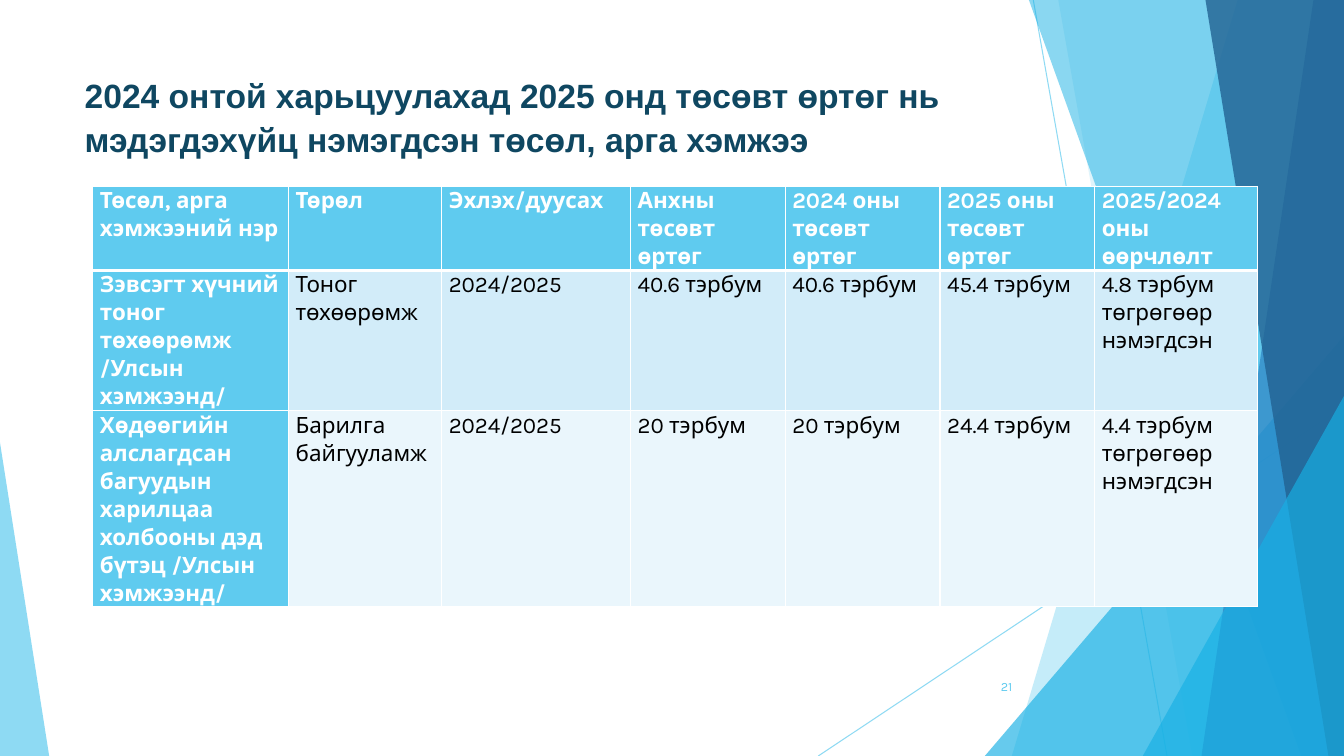
from lxml import etree
from pptx import Presentation
from pptx.dml.color import RGBColor
from pptx.enum.shapes import MSO_CONNECTOR, MSO_SHAPE
from pptx.enum.text import MSO_ANCHOR, MSO_AUTO_SIZE, PP_ALIGN
from pptx.oxml.ns import qn
from pptx.util import Cm, Pt

STRAIGHT = MSO_CONNECTOR.STRAIGHT
TRIANGLE = MSO_SHAPE.ISOSCELES_TRIANGLE
TITLE_ONLY = 5
WIDTH, HEIGHT = 33.87, 19.05
COLORS = {
    "sky": "5FCBEF",
    "cyan": "17B0E4",
    "blue": "2E83C3",
    "navy": "226292",
    "title": "0F4761",
    "white": "FFFFFF",
    "black": "000000",
    "band_dark": "D2ECF9",
    "band_light": "EAF6FC",
}


def paint(fill, color, opacity):
    fill.solid()
    fill.fore_color.rgb = RGBColor.from_string(COLORS[color])
    for node in fill._xPr.iter(qn("a:srgbClr")):
        etree.SubElement(node, qn("a:alpha"), val=str(opacity * 1000))


def style(paragraph, font, size, color, bold):
    paragraph.font.name = font
    paragraph.font.size = Pt(size)
    paragraph.font.bold = bold
    paragraph.font.color.rgb = RGBColor.from_string(COLORS[color])


deck = Presentation()
deck.slide_width = Cm(WIDTH)
deck.slide_height = Cm(HEIGHT)
page = deck.slides.add_slide(deck.slide_layouts[TITLE_ONLY])

for ends in [(26.04, 0, 29.41, HEIGHT), (WIDTH, 10.24, 20.62, HEIGHT)]:
    ray = page.shapes.add_connector(STRAIGHT, *[Cm(value) for value in ends])
    ray.line.width = Pt(0.75)
    paint(ray.line.fill, "sky", 70)
    etree.SubElement(ray._element.spPr, qn("a:effectLst"))

facets = [
    ("band", (31.19, 25.5), "sky", 36),
    ("band", (26.67, 30.05), "sky", 20),
    ("triangle", (24.82, 8.46, 9.05, 1), "cyan", 66),
    ("band", (25.93, 32.79), "cyan", 50),
    ("band", (33.1, 30.28), "blue", 70),
    ("band", (30.38, 33.48), "navy", 80),
    ("triangle", (28.8, 9.98, 5.07, 1), "cyan", 66),
    ("triangle", (0, 11.15, 1.24, 0), "sky", 70),
]
for kind, geometry, color, opacity in facets:
    if kind == "band":
        top_x, bottom_x = geometry
        outline = page.shapes.build_freeform(Cm(top_x), 0)
        corners = [(WIDTH, 0), (WIDTH, HEIGHT), (bottom_x, HEIGHT)]
        outline.add_line_segments([(Cm(x), Cm(y)) for x, y in corners])
        facet = outline.convert_to_shape()
    else:
        left, top, width, apex = geometry
        facet = page.shapes.add_shape(
            TRIANGLE, Cm(left), Cm(top), Cm(width), Cm(HEIGHT - top))
        facet.adjustments[0] = apex
    paint(facet.fill, color, opacity)
    facet.line.fill.background()
    facet.shadow.inherit = False

title = page.shapes.title
title.left, title.top, title.width, title.height = Cm(1.88), Cm(1.7), Cm(23.88), Cm(3.66)
title.text_frame.text = (
    "2024 онтой харьцуулахад 2025 онд төсөвт өртөг нь мэдэгдэхүйц нэмэгдсэн төсөл, арга хэмжээ")
title.text_frame.auto_size = MSO_AUTO_SIZE.NONE
title.text_frame.vertical_anchor = MSO_ANCHOR.TOP
heading = title.text_frame.paragraphs[0]
heading.alignment = PP_ALIGN.LEFT
heading.line_spacing = 1.07
style(heading, "Arial", 24, "title", True)

rows = [
    ["Төсөл, арга хэмжээний нэр", "Төрөл", "Эхлэх/дуусах", "Анхны төсөвт өртөг",
     "2024 оны төсөвт өртөг", "2025 оны төсөвт өртөг", "2025/2024 оны өөрчлөлт"],
    ["Зэвсэгт хүчний тоног төхөөрөмж /Улсын хэмжээнд/", "Тоног төхөөрөмж", "2024/2025",
     "40.6 тэрбум", "40.6 тэрбум", "45.4 тэрбум", "4.8 тэрбум төгрөгөөр нэмэгдсэн"],
    ["Хөдөөгийн алслагдсан багуудын харилцаа холбооны дэд бүтэц /Улсын хэмжээнд/",
     "Барилга байгууламж", "2024/2025",
     "20 тэрбум", "20 тэрбум", "24.4 тэрбум", "4.4 тэрбум төгрөгөөр нэмэгдсэн"],
]
column_widths = [4.93, 3.86, 4.76, 3.9, 3.9, 3.9, 4.09]
row_heights = [1.9, 3.2, 4.5]
row_fills = ["sky", "band_dark", "band_light"]
table = page.shapes.add_table(
    len(rows), len(column_widths), Cm(2.34), Cm(4.7),
    Cm(sum(column_widths)), Cm(sum(row_heights))).table
for column, width in zip(table.columns, column_widths):
    column.width = Cm(width)
for row, height in zip(table.rows, row_heights):
    row.height = Cm(height)

for row_index, texts in enumerate(rows):
    for column_index, text in enumerate(texts):
        is_header = row_index == 0 or column_index == 0
        cell = table.cell(row_index, column_index)
        cell.text = text
        cell.margin_left = cell.margin_right = Cm(0.18)
        cell.margin_top = cell.margin_bottom = 0
        paragraph = cell.text_frame.paragraphs[0]
        paragraph.line_spacing = 1.07
        style(paragraph, "Karla", 16, "white" if is_header else "black", is_header)
        borders = {
            "a:lnL": 1,
            "a:lnR": 1,
            "a:lnT": 3 if row_index == 1 else 1,
            "a:lnB": 3 if row_index == 0 else 1,
        }
        properties = cell._tc.get_or_add_tcPr()
        for tag, points in borders.items():
            border = etree.SubElement(properties, qn(tag), w=str(Pt(points)))
            border_fill = etree.SubElement(border, qn("a:solidFill"))
            etree.SubElement(border_fill, qn("a:srgbClr"), val=COLORS["white"])
        cell.fill.solid()
        fill_name = "sky" if is_header else row_fills[row_index]
        cell.fill.fore_color.rgb = RGBColor.from_string(COLORS[fill_name])

number_box = page.shapes.add_textbox(Cm(23.85), Cm(16.79), Cm(1.91), Cm(1.02))
number_box.text_frame.word_wrap = True
number_box.text_frame.vertical_anchor = MSO_ANCHOR.MIDDLE
number_box.text_frame.text = "21"
number = number_box.text_frame.paragraphs[0]
number.alignment = PP_ALIGN.RIGHT
style(number, "Karla", 9, "sky", False)

deck.save("out.pptx")
